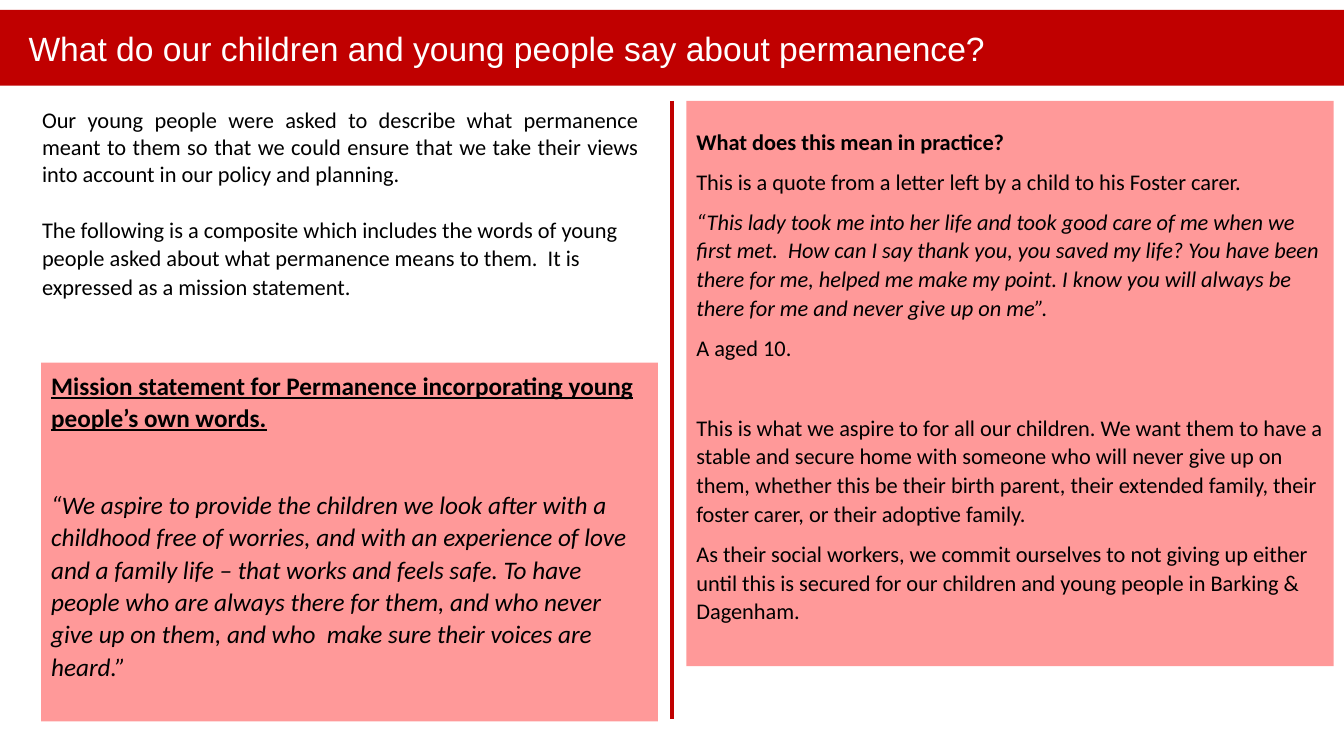
from dataclasses import dataclass

from lxml import etree
from pptx import Presentation
from pptx import util as u
from pptx.dml.color import RGBColor
from pptx.enum import shapes, text
from pptx.oxml.ns import qn


@dataclass(frozen=True)
class Theme:
    red: RGBColor = RGBColor(0xC0, 0x00, 0x00)
    pink: RGBColor = RGBColor(0xFF, 0x99, 0x99)
    black: RGBColor = RGBColor(0, 0, 0)
    white: RGBColor = RGBColor(0xFF, 0xFF, 0xFF)
    head_font: str = "Arial"
    body_font: str = "Calibri"
    title: int = 24
    mission: int = 18
    body: int = 16
    spacing: float = 1.07
    after: int = 8


class Deck:
    def __init__(self, theme, width, height):
        self.t = theme
        self.prs = Presentation()
        self.prs.slide_width, self.prs.slide_height = u.Cm(width), u.Cm(height)
        self.s = self.prs.slides.add_slide(self.prs.slide_layouts[6])

    def run(self, p, words, size, font=None, color=None, **style):
        r = p.add_run()
        r.text = words
        r.font.size = u.Pt(size)
        r.font.name = font or self.t.body_font
        r.font.color.rgb = color or self.t.black
        for name, value in style.items():
            setattr(r.font, name, value)

    def panel(self, x, y, w, h, fill, left=0.25, top=0.13,
              anchor=text.MSO_ANCHOR.TOP):
        sp = self.s.shapes.add_shape(shapes.MSO_SHAPE.RECTANGLE,
                                     *map(u.Cm, (x, y, w, h)))
        sp.shadow.inherit = False
        sp.fill.solid()
        sp.fill.fore_color.rgb = fill
        sp.line.fill.background()
        return self.frame(sp, left, top, anchor)

    def textbox(self, x, y, w, h):
        sp = self.s.shapes.add_textbox(*map(u.Cm, (x, y, w, h)))
        return self.frame(sp, 0.25, 0.13, text.MSO_ANCHOR.TOP)

    def frame(self, sp, left, top, anchor):
        tf = sp.text_frame
        tf.word_wrap = True
        tf.margin_left, tf.margin_top = u.Cm(left), u.Cm(top)
        tf.vertical_anchor = anchor
        return tf

    def paragraphs(self, tf, size, items):
        """Each item is words, space before in points, run style."""
        for i, (words, before, style) in enumerate(items):
            p = tf.add_paragraph() if i else tf.paragraphs[0]
            p.alignment = text.PP_ALIGN.LEFT
            p.line_spacing = self.t.spacing
            p.space_before, p.space_after = u.Pt(before), u.Pt(self.t.after)
            self.run(p, words, size, **style)

    def line(self, x1, y1, x2, y2, color, weight):
        c = self.s.shapes.add_connector(shapes.MSO_CONNECTOR.STRAIGHT,
                                        *map(u.Cm, (x1, y1, x2, y2)))
        c.line.color.rgb = color
        c.line.width = u.Pt(weight)
        etree.SubElement(c._element.spPr, qn("a:effectLst"))


def main():
    t = Theme()
    width, top = 33.87, 2.54
    d = Deck(t, width, 19.05)

    # Title band
    tf = d.panel(0, 0.25, width, 1.91, t.red, left=0.72,
                 anchor=text.MSO_ANCHOR.MIDDLE)
    p = tf.paragraphs[0]
    p.alignment = text.PP_ALIGN.LEFT
    d.run(p, "What do our children and young people say about permanence?",
          t.title, t.head_font, t.white)

    # Column divider
    d.line(width / 2, top, width / 2, 18.11, t.red, 2.5)

    # Introduction
    tf = d.textbox(0.81, top, 15.54, 5.16)
    d.paragraphs(tf, t.body, [
        ("Our young people were asked to describe what permanence meant to them "
         "so that we could ensure that we take their views into account in our "
         "policy and planning.", 0, {}),
        ("The following is a composite which includes the words of young people "
         "asked about what permanence means to them.  It is expressed as a "
         "mission statement.", 19.5, {}),
    ])
    p = tf.paragraphs[0]
    p.alignment = text.PP_ALIGN.JUSTIFY
    p.line_spacing, p.space_after = 1.0, u.Pt(0)

    # Practice panel
    tf = d.panel(17.3, top, 16.31, 14.25, t.pink, top=0.64)
    d.paragraphs(tf, t.body, [
        ("What does this mean in practice?", 0, {"bold": True}),
        ("This is a quote from a letter left by a child to his Foster carer.",
         0, {}),
        ("“This lady took me into her life and took good care of me when we "
         "first met.  How can I say thank you, you saved my life? You have been "
         "there for me, helped me make my point. I know you will always be there "
         "for me and never give up on me”.", 0, {"italic": True}),
        ("A aged 10.", 0, {}),
        ("This is what we aspire to for all our children. We want them to have a "
         "stable and secure home with someone who will never give up on them, "
         "whether this be their birth parent, their extended family, their "
         "foster carer, or their adoptive family.", 28.5, {}),
        ("As their social workers, we commit ourselves to not giving up either "
         "until this is secured for our children and young people in Barking & "
         "Dagenham.", 0, {}),
    ])

    # Mission statement panel
    tf = d.panel(1.04, 9.14, 15.54, 9.04, t.pink)
    d.paragraphs(tf, t.mission, [
        ("Mission statement for Permanence incorporating young people’s own "
         "words.", 0, {"bold": True, "underline": True}),
        ("“We aspire to provide the children we look after with a childhood free "
         "of worries, and with an experience of love and a family life – that "
         "works and feels safe. To have people who are always there for them, "
         "and who never give up on them, and who  make sure their voices are "
         "heard.”", 31, {"italic": True}),
    ])

    d.prs.save("out.pptx")


if __name__ == "__main__":
    main()
